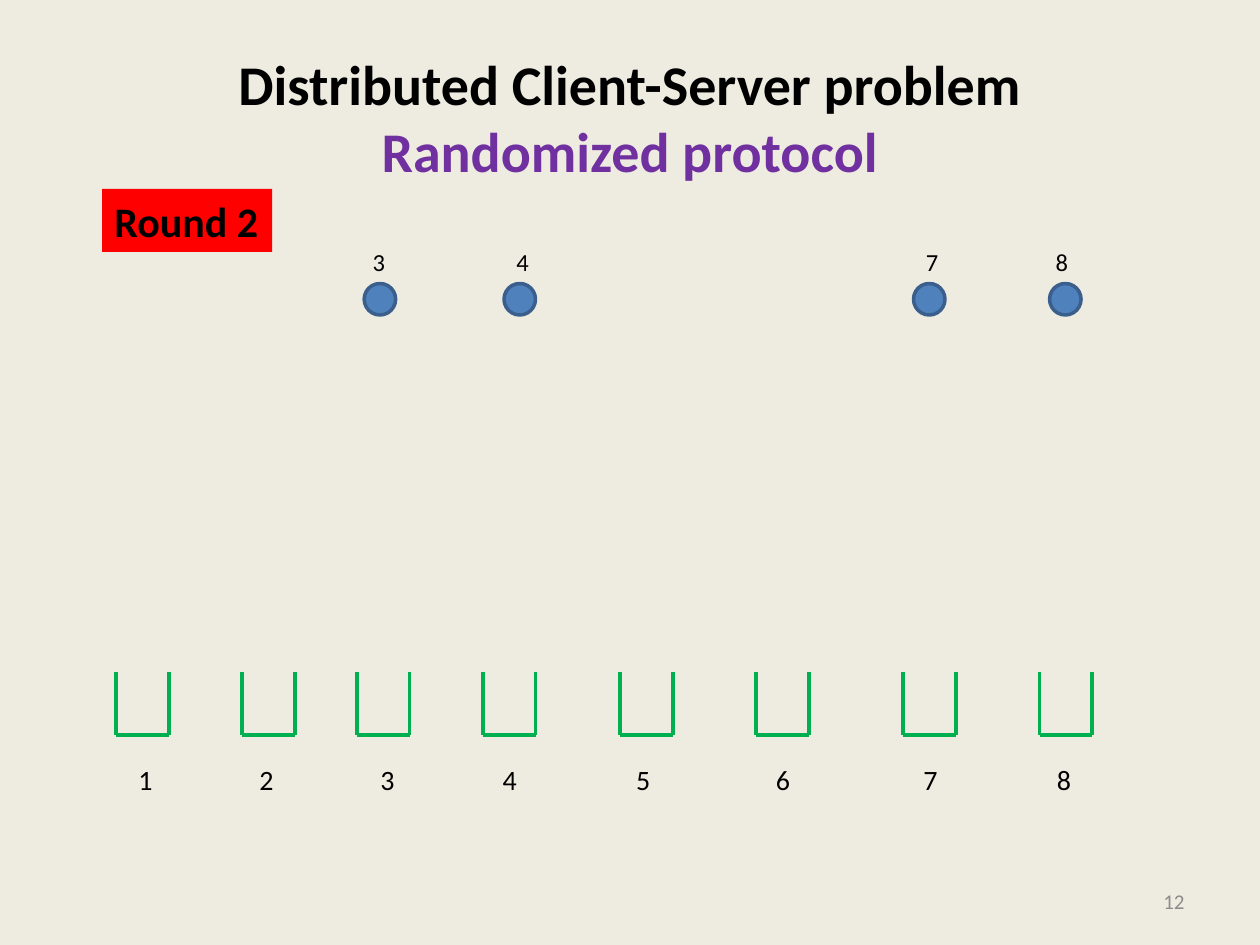
from lxml import etree
from pptx import Presentation
from pptx import util as u
from pptx.dml.color import RGBColor
from pptx.enum import shapes, text
from pptx.oxml import ns

COLORS = {
    "background": "EEECE1",
    "text": "000000",
    "subtitle": "7030A0",
    "number": "8C8C8C",
    "client": "4F81BD",
    "client_line": "3A5F8C",
    "server": "00B050",
    "round": "FF0000",
}
FONT = "Calibri"

# Clients still waiting: number, left of circle, label offset from circle
CLIENTS = [("3", 2.89, -0.03), ("4", 4, 0), ("7", 7.25, 0), ("8", 8.33, -0.05)]
CLIENT_TOP, CLIENT_SIZE = 2.25, 0.25

SERVER_LEFTS = [0.92, 1.92, 2.83, 3.83, 4.92, 6, 7.17, 8.25]
SERVER_TOP, SERVER_WIDTH, SERVER_HEIGHT = 5.33, 0.42, 0.5
SERVER_LABEL_BOX = (1, 6, 7.67, 0.37)
SERVER_TABS = [0.96, 1.92, 2.89, 3.95, 5.06, 6.23, 7.29]


def color(name):
    return RGBColor.from_string(COLORS[name])


def inches(*lengths):
    return [u.Inches(length) for length in lengths]


def add_run(paragraph, content, size, color_name="text", bold=False):
    run = paragraph.add_run()
    run.text = content
    run.font.name = FONT
    run.font.size = u.Pt(size)
    run.font.bold = bold
    run.font.color.rgb = color(color_name)


def add_label(container, box, content, size, color_name="text", bold=False,
              align=text.PP_ALIGN.LEFT, wrap=False):
    label = container.add_textbox(*inches(*box))
    label.text_frame.word_wrap = wrap
    paragraph = label.text_frame.paragraphs[0]
    paragraph.alignment = align
    add_run(paragraph, content, size, color_name, bold)
    return label


def add_title(slide, box):
    title = slide.shapes.title
    title.left, title.top, title.width, title.height = inches(*box)
    title.text_frame.vertical_anchor = text.MSO_ANCHOR.MIDDLE
    paragraph = title.text_frame.paragraphs[0]
    paragraph.alignment = text.PP_ALIGN.CENTER
    add_run(paragraph, "Distributed Client-Server problem", 32, bold=True)
    paragraph.add_line_break()
    add_run(paragraph, "Randomized protocol", 32, "subtitle", bold=True)


def add_client(slide, number, left, top, label_offset):
    group = slide.shapes.add_group_shape().shapes
    circle = group.add_shape(shapes.MSO_SHAPE.OVAL,
                             *inches(left, top, CLIENT_SIZE, CLIENT_SIZE))
    circle.shadow.inherit = False
    circle.fill.solid()
    circle.fill.fore_color.rgb = color("client")
    circle.line.color.rgb = color("client_line")
    circle.line.width = u.Pt(2)
    add_label(group, (left + label_offset, top - 0.34, 0.3, 0.34), number, 14)


def add_line(container, start, end):
    line = container.add_connector(shapes.MSO_CONNECTOR.STRAIGHT,
                                   *inches(*start, *end))
    line.line.color.rgb = color("server")
    line.line.width = u.Pt(2.25)
    etree.SubElement(line._element.spPr, ns.qn("a:effectLst"))


def add_server(container, left, top, width, height):
    """Draw a bin that is open at the top."""
    right, bottom = left + width, top + height
    add_line(container, (left, top), (left, bottom))
    add_line(container, (right, top), (right, bottom))
    add_line(container, (left, bottom), (right, bottom))


def add_tab_stops(paragraph, positions):
    tab_list = etree.SubElement(paragraph._p.get_or_add_pPr(), ns.qn("a:tabLst"))
    for position in positions:
        etree.SubElement(tab_list, ns.qn("a:tab"),
                         pos=str(u.Inches(position)), algn="l")


def add_server_row(slide):
    group = slide.shapes.add_group_shape().shapes
    for left in SERVER_LEFTS:
        add_server(group, left, SERVER_TOP, SERVER_WIDTH, SERVER_HEIGHT)
    numbers = "\t".join(str(i + 1) for i in range(len(SERVER_LEFTS)))
    label = add_label(group, SERVER_LABEL_BOX, numbers, 16, wrap=True)
    add_tab_stops(label.text_frame.paragraphs[0], SERVER_TABS)


def add_round_tag(slide, box):
    tag = add_label(slide.shapes, box, "Round 2", 24, bold=True)
    tag.fill.solid()
    tag.fill.fore_color.rgb = color("round")


def add_slide_number(slide, box):
    label = add_label(slide.shapes, box, "12", 12, "number",
                      align=text.PP_ALIGN.RIGHT, wrap=True)
    label.text_frame.vertical_anchor = text.MSO_ANCHOR.MIDDLE


def main():
    presentation = Presentation()
    presentation.slide_width, presentation.slide_height = inches(10, 7.5)
    slide = presentation.slides.add_slide(
        presentation.slide_layouts.get_by_name("Title Only"))
    slide.background.fill.solid()
    slide.background.fill.fore_color.rgb = color("background")

    add_title(slide, (0.5, 0.3, 9, 1.25))
    add_slide_number(slide, (7.17, 6.95, 2.33, 0.4))
    for number, left, label_offset in CLIENTS:
        add_client(slide, number, left, CLIENT_TOP, label_offset)
    add_server_row(slide)
    add_round_tag(slide, (0.81, 1.5, 1.35, 0.5))
    presentation.save("out.pptx")


if __name__ == "__main__":
    main()
